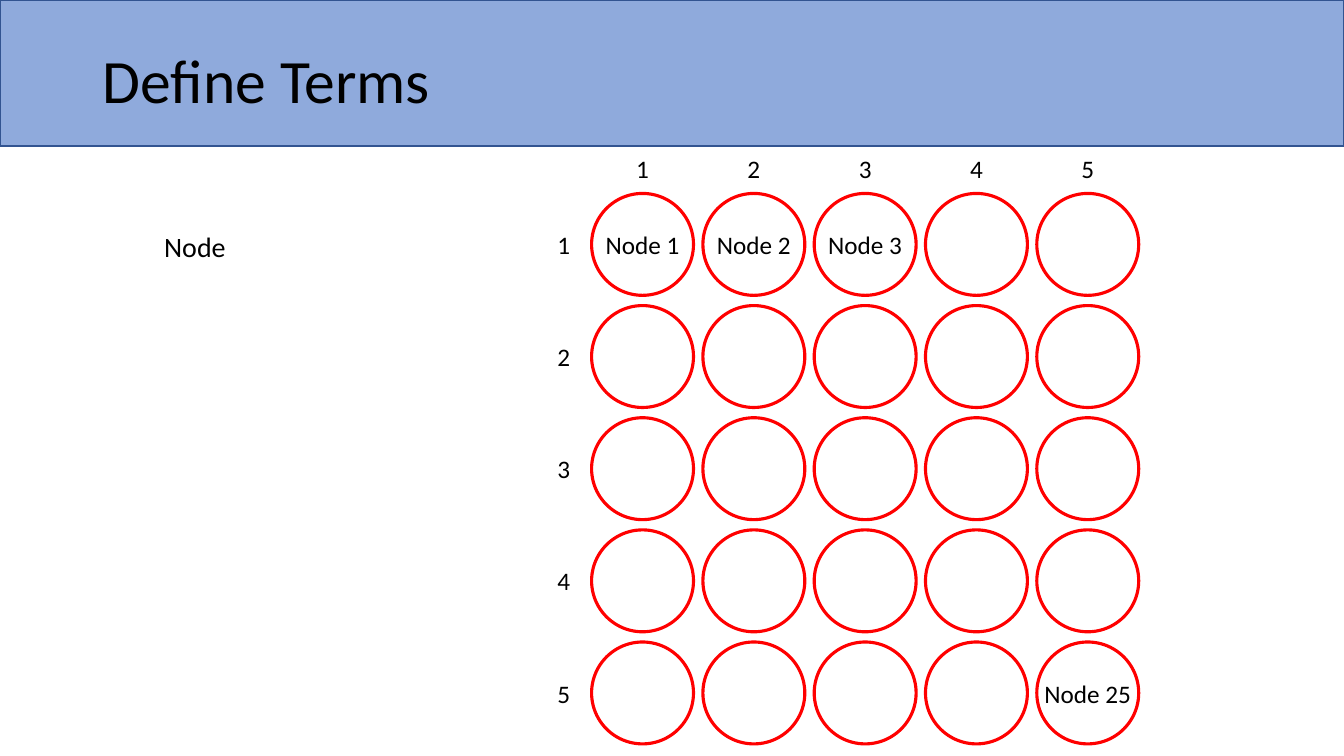
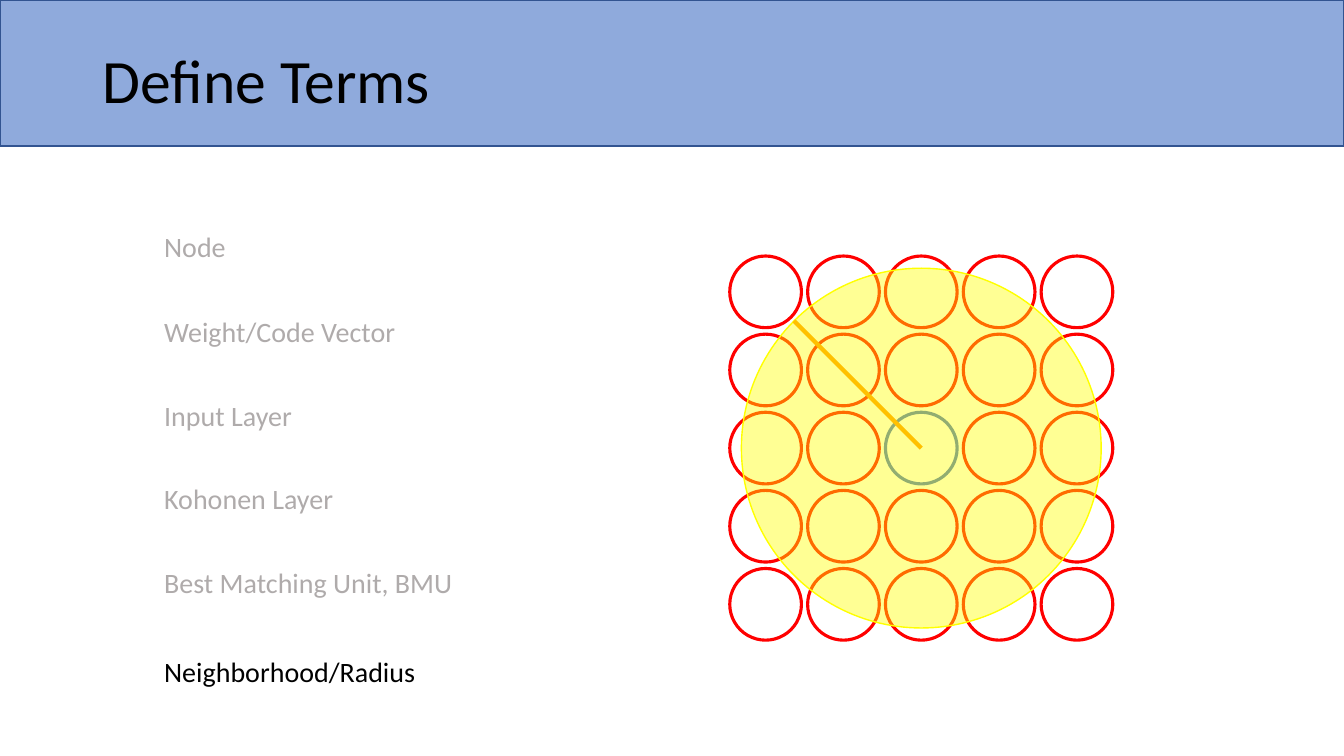
from dataclasses import dataclass
from math import sqrt

from lxml import etree
from pptx import Presentation
from pptx.dml.color import RGBColor
from pptx.enum.shapes import MSO_CONNECTOR, MSO_SHAPE
from pptx.enum.text import MSO_ANCHOR, PP_ALIGN
from pptx.oxml.ns import qn
from pptx.util import Pt

RECT, OVAL = MSO_SHAPE.RECTANGLE, MSO_SHAPE.OVAL
STRAIGHT = MSO_CONNECTOR.STRAIGHT
TOP, MIDDLE = MSO_ANCHOR.TOP, MSO_ANCHOR.MIDDLE
LEFT, CENTER = PP_ALIGN.LEFT, PP_ALIGN.CENTER


@dataclass(frozen=True)
class Theme:
    font: str = "Calibri"
    title: float = 44
    term: float = 20
    label: float = 18
    text: str = "000000"
    muted: str = "AFABAB"
    band: str = "8FAADC"
    band_line: str = "325491"
    node: str = "FF0000"
    bmu: str = "4472C4"
    area: str = "FFFF00"
    radius: str = "FFC000"


@dataclass(frozen=True)
class Term:
    text: str
    top: float


@dataclass(frozen=True)
class Grid:
    left: float
    top: float
    size: float
    pitch_x: float
    pitch_y: float
    count: int = 5

    def center(self, row: float, col: float) -> tuple[float, float]:
        half = self.size / 2
        return (self.left + col * self.pitch_x + half,
                self.top + row * self.pitch_y + half)


THEME = Theme()
WIDTH, HEIGHT = 960, 540
BAND_HEIGHT = 104.4
TERMS = [
    Term("Node", 148.3),
    Term("Weight/Code Vector", 208.8),
    Term("Input Layer", 269.3),
    Term("Kohonen Layer", 328.3),
    Term("Best Matching Unit, BMU", 388.1),
    Term("Neighborhood/Radius", 452.2),
]
NUMBERED_GRID = Grid(422.6, 138.2, 72.8, 79.5, 80.1)
NODE_LABELS = {(0, 0): "Node 1", (0, 1): "Node 2", (0, 2): "Node 3", (4, 4): "Node 25"}
COLUMN_NUMBER_Y, ROW_NUMBER_X = 120.6, 402.8
SMALL_GRID = Grid(521.3, 182.9, 51.2, 55.6, 55.8)
BMU_CELL = (2, 2)
AREA_SIZE, AREA_OPACITY = 257, 42


def write(sp, text, *, size, color=THEME.text, align=LEFT, anchor=TOP, spacing=1.0, wrap=False):
    tf = sp.text_frame
    tf.word_wrap = wrap
    tf.vertical_anchor = anchor
    p = tf.paragraphs[0]
    p.alignment = align
    p.line_spacing = spacing
    r = p.add_run()
    r.text = text
    r.font.name = THEME.font
    r.font.size = Pt(size)
    r.font.color.rgb = RGBColor.from_string(color)


def add_text(s, text: str, x: float, y: float, w: float, h: float, **style) -> None:
    write(s.shapes.add_textbox(Pt(x), Pt(y), Pt(w), Pt(h)), text, **style)


def add_shape(s, kind, x: float, y: float, w: float, h: float, *,
              line: str, weight: float, fill: str = "", opacity: float = 100):
    sp = s.shapes.add_shape(kind, Pt(x), Pt(y), Pt(w), Pt(h))
    sp.shadow.inherit = False
    sp.line.color.rgb = RGBColor.from_string(line)
    sp.line.width = Pt(weight)
    if not fill:
        sp.fill.background()
        return sp
    sp.fill.solid()
    sp.fill.fore_color.rgb = RGBColor.from_string(fill)
    if opacity < 100:
        color = sp.fill._xPr.find(f"{qn('a:solidFill')}/{qn('a:srgbClr')}")
        etree.SubElement(color, qn("a:alpha"), val=str(opacity * 1000))
    return sp


def add_circle(s, center: tuple[float, float], size: float, **style):
    x, y = center
    return add_shape(s, OVAL, x - size / 2, y - size / 2, size, size, **style)


def add_line(s, start: tuple[float, float], end: tuple[float, float],
             color: str, weight: float) -> None:
    cx = s.shapes.add_connector(STRAIGHT, *(Pt(v) for v in (*start, *end)))
    cx.line.color.rgb = RGBColor.from_string(color)
    cx.line.width = Pt(weight)
    etree.SubElement(cx._element.spPr, qn("a:effectLst"))


def add_terms_slide(prs, terms: list[Term]):
    """Add a slide with the title band and the terms, the last one highlighted."""
    s = prs.slides.add_slide(prs.slide_layouts[6])
    add_shape(s, RECT, 0, 0, WIDTH, BAND_HEIGHT,
              fill=THEME.band, line=THEME.band_line, weight=1)
    add_text(s, "Define Terms", 66.2, 28.8, 828, 61.2,
             size=THEME.title, anchor=MIDDLE, spacing=0.9, wrap=True)
    for term in terms:
        color = THEME.text if term is terms[-1] else THEME.muted
        add_text(s, term.text, 110.2, term.top, 230, 39.6,
                 size=THEME.term, color=color, spacing=1.5)
    return s


def add_nodes(s, grid: Grid, labels: dict, bmu: tuple[int, int] | None = None) -> None:
    for row in range(grid.count):
        for col in range(grid.count):
            cell = (row, col)
            sp = add_circle(s, grid.center(row, col), grid.size, weight=2.25,
                            line=THEME.bmu if cell == bmu else THEME.node)
            if cell in labels:
                write(sp, labels[cell], size=THEME.label, align=CENTER, anchor=MIDDLE)


def add_grid_numbers(s, grid: Grid) -> None:
    w, h = 28, 29
    for i in range(grid.count):
        x, y = grid.center(i, i)
        for cx, cy in ((x, COLUMN_NUMBER_Y), (ROW_NUMBER_X, y)):
            add_text(s, str(i + 1), cx - w / 2, cy - h / 2, w, h,
                     size=THEME.label, align=CENTER, anchor=MIDDLE)


def add_neighborhood(s, center: tuple[float, float]) -> None:
    add_circle(s, center, AREA_SIZE, fill=THEME.area, opacity=AREA_OPACITY,
               line=THEME.area, weight=1)
    reach = AREA_SIZE / 2 / sqrt(2)
    add_line(s, center, (center[0] - reach, center[1] - reach), THEME.radius, 3)


def main() -> None:
    prs = Presentation()
    prs.slide_width, prs.slide_height = Pt(WIDTH), Pt(HEIGHT)

    s = add_terms_slide(prs, TERMS[:1])
    add_nodes(s, NUMBERED_GRID, NODE_LABELS)
    add_grid_numbers(s, NUMBERED_GRID)

    s = add_terms_slide(prs, TERMS)
    add_nodes(s, SMALL_GRID, {}, BMU_CELL)
    add_neighborhood(s, SMALL_GRID.center(*BMU_CELL))

    prs.save("out.pptx")


if __name__ == "__main__":
    main()
